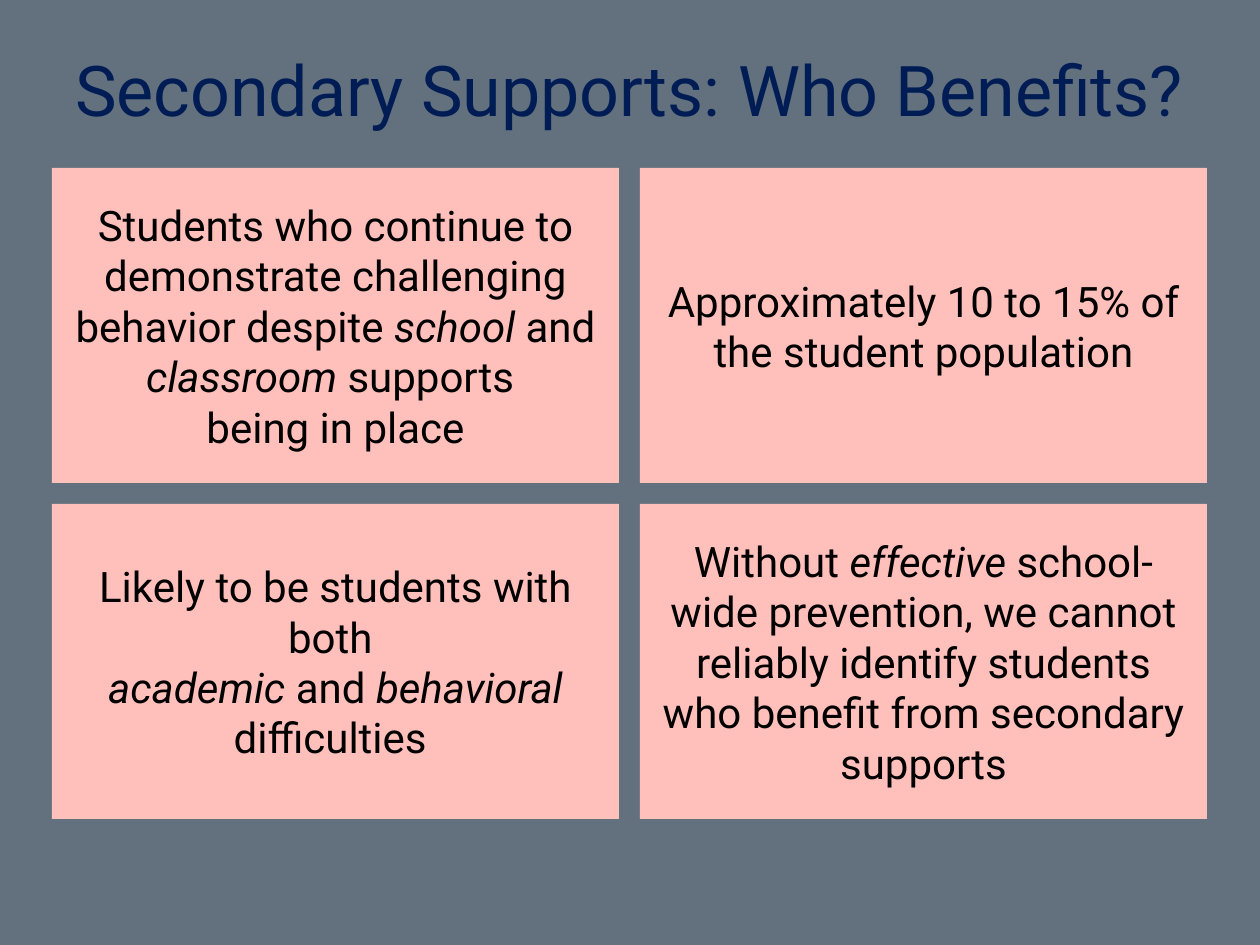
from pptx import Presentation
from pptx.dml.color import RGBColor
from pptx.enum.shapes import MSO_SHAPE
from pptx.enum.text import MSO_ANCHOR, PP_ALIGN
from pptx.util import Emu, Pt

EMU_PER_PX = 914400 / 126
FONT = "Roboto"
SLATE = RGBColor(0x63, 0x71, 0x7F)
NAVY = RGBColor(0x00, 0x1C, 0x54)
PINK = RGBColor(0xFF, 0xBF, 0xBB)
BLACK = RGBColor(0, 0, 0)

CARD_LEFT, CARD_TOP = 52, 168
CARD_W, CARD_H, GAP = 567, 315, 21
COLUMNS = 2
CARDS = [
    ["Students who continue to demonstrate challenging behavior despite "
     "*school *and *classroom *supports ",
     "being in place"],
    ["Approximately 10 to 15% of the student population"],
    ["Likely to be students with both ",
     "*academic* and *behavioral *difficulties "],
    ["Without *effective *school-wide prevention, we cannot reliably "
     "identify students who benefit from secondary supports"],
]


def px(n):
    return Emu(round(n * EMU_PER_PX))


def set_font(p, size, color):
    p.font.name = FONT
    p.font.size = Pt(size)
    p.font.color.rgb = color


def add_runs(p, text):
    for i, part in enumerate(text.split("*")):
        if part:
            r = p.add_run()
            r.text = part
            if i % 2:
                r.font.italic = True


def add_title(s, text, x, y, w, h):
    tf = s.shapes.add_textbox(px(x), px(y), px(w), px(h)).text_frame
    tf.word_wrap = True
    tf.vertical_anchor = MSO_ANCHOR.MIDDLE
    p = tf.paragraphs[0]
    p.text = text
    p.line_spacing = 0.9
    set_font(p, 40, NAVY)


def add_card(s, lines, x, y):
    sp = s.shapes.add_shape(MSO_SHAPE.RECTANGLE, px(x), px(y), px(CARD_W), px(CARD_H))
    sp.shadow.inherit = False
    sp.fill.solid()
    sp.fill.fore_color.rgb = PINK
    sp.line.fill.background()
    tf = sp.text_frame
    tf.word_wrap = True
    tf.vertical_anchor = MSO_ANCHOR.MIDDLE
    for i, line in enumerate(lines):
        p = tf.add_paragraph() if i else tf.paragraphs[0]
        p.alignment = PP_ALIGN.CENTER
        set_font(p, 24, BLACK)
        add_runs(p, line)


def main():
    prs = Presentation()
    prs.slide_width, prs.slide_height = px(1260), px(945)
    s = prs.slides.add_slide(prs.slide_layouts[6])
    s.background.fill.solid()
    s.background.fill.fore_color.rgb = SLATE
    add_title(s, "Secondary Supports: Who Benefits?", 63, 29, 1144, 129)
    for i, lines in enumerate(CARDS):
        row, col = divmod(i, COLUMNS)
        add_card(s, lines, CARD_LEFT + col * (CARD_W + GAP), CARD_TOP + row * (CARD_H + GAP))
    prs.save("out.pptx")


if __name__ == "__main__":
    main()
